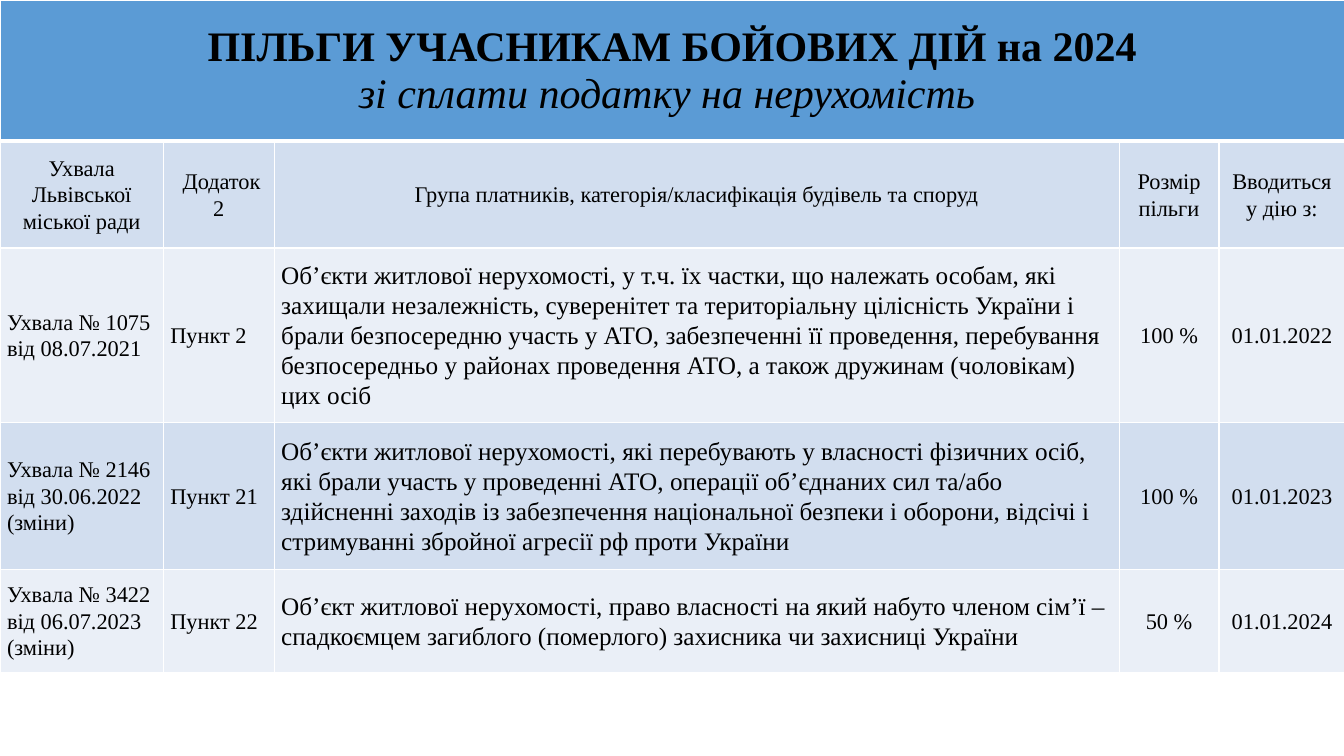
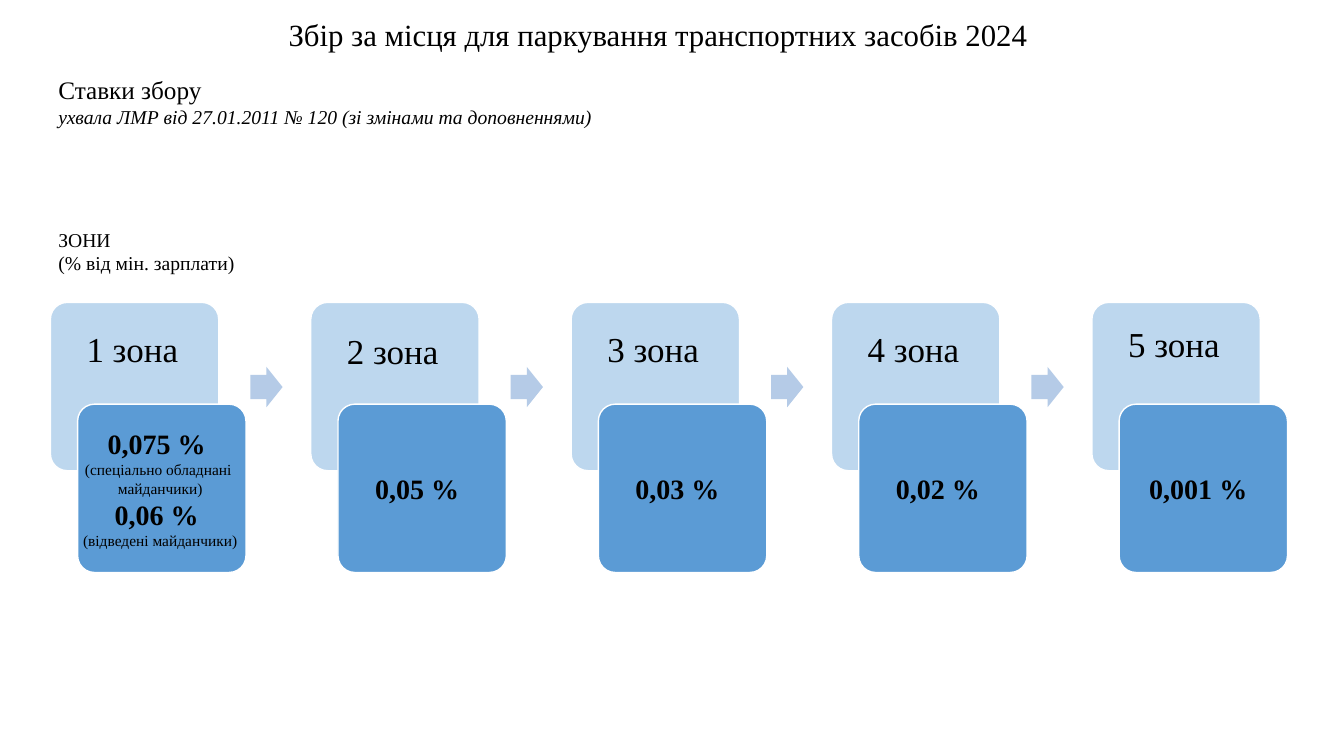
from dataclasses import dataclass

from lxml.etree import SubElement
from pptx import Presentation
from pptx.dml.color import RGBColor
from pptx.enum.shapes import MSO_SHAPE
from pptx.enum.text import MSO_ANCHOR, PP_ALIGN
from pptx.oxml.ns import qn
from pptx.util import Inches, Pt


@dataclass(frozen=True)
class Theme:
    """Colours, font and type sizes shared by the slides."""
    font: str = "Times New Roman"
    ink: str = "000000"
    white: str = "FFFFFF"
    blue: str = "5B9BD5"
    light_blue: str = "BDD7EE"
    arrow: str = "B5CBE7"
    band_dark: str = "D2DEEF"
    band_light: str = "EAEFF7"
    banner: int = 30
    zone: int = 25
    title: int = 22
    rate: int = 20
    body: int = 18
    cell: int = 16
    note: int = 14
    small: int = 11


THEME = Theme()

COLUMN_WIDTHS = [1.62, 1.1, 8.38, 0.99, 1.25]
ROW_HEIGHTS = [1.4, 1.06, 1.73, 1.46, 1.02]
GROUP_COLUMN = 2
CENTRED_COLUMNS = (3, 4)

BENEFIT_TITLE = [
    ("ПІЛЬГИ УЧАСНИКАМ БОЙОВИХ ДІЙ на 2024", THEME.banner, True, False),
    ("зі сплати податку на нерухомість ", THEME.banner, False, True),
]
BENEFIT_ROWS = [
    ["Ухвала Львівської міської ради", "\u00a0Додаток 2".replace("\u00a0", chr(160)),
     "Група платників, категорія/класифікація будівель та споруд",
     "Розмір пільги", "Вводиться у дію з:"],
    ["Ухвала № 1075 від 08.07.2021", "Пункт 2",
     "Об’єкти житлової нерухомості, у т.ч. їх частки, що належать особам, які "
     "захищали незалежність, суверенітет та територіальну цілісність України і "
     "брали безпосередню участь у АТО, забезпеченні її проведення, перебування "
     "безпосередньо у районах проведення АТО, а також дружинам (чоловікам) цих осіб",
     "100 %", "01.01.2022"],
    ["Ухвала № 2146 від 30.06.2022 (зміни)", "Пункт 21",
     "Об’єкти житлової нерухомості, які перебувають у власності фізичних осіб, "
     "які брали участь у проведенні АТО, операції об’єднаних сил та/або "
     "здійсненні заходів із забезпечення національної безпеки і оборони, відсічі і "
     "стримуванні збройної агресії рф проти України",
     "100 %", "01.01.2023"],
    ["Ухвала № 3422 від 06.07.2023 (зміни)", "Пункт 22",
     "Об’єкт житлової нерухомості, право власності на який набуто членом сім’ї – "
     "спадкоємцем загиблого (померлого) захисника чи захисниці України",
     "50 %", "01.01.2024"],
]

CARD_SIZE = 1.67
FIRST_CARD_LEFT, LAST_CARD_LEFT = 0.5, 10.83
CARDS_TOP = 3
ZONES = [
    ("1 зона", 0.2, [
        ("0,075 % ", THEME.rate, True, False),
        ("(спеціально обладнані ", THEME.small, False, False),
        ("майданчики)", THEME.small, False, False),
        ("0,06 % ", THEME.rate, True, False),
        ("(відведені майданчики)", THEME.small, False, False),
    ]),
    ("2 зона", 0.22, [("0,05 % ", THEME.rate, True, False)]),
    ("3 зона", 0.2, [("0,03 % ", THEME.rate, True, False)]),
    ("4 зона", 0.2, [("0,02 % ", THEME.rate, True, False)]),
    ("5 зона", 0.15, [("0,001 % ", THEME.rate, True, False)]),
]


def write(frame, lines, align=PP_ALIGN.LEFT, spacing=1.0):
    """Fill a text frame with (text, size, bold, italic) lines."""
    frame.word_wrap = True
    frame.text = "\n".join(line[0] for line in lines)
    for para, (_, size, bold, italic) in zip(frame.paragraphs, lines):
        para.alignment = align
        para.line_spacing = spacing
        for span in para.runs:
            span.font.name = THEME.font
            span.font.size = Pt(size)
            span.font.bold = bold
            span.font.italic = italic
            span.font.color.rgb = RGBColor.from_string(THEME.ink)


def add_text(page, left, top, width, height, lines, align=PP_ALIGN.LEFT,
             anchor=MSO_ANCHOR.TOP, spacing=1.0):
    """Add a wrapped text box."""
    box = page.shapes.add_textbox(Inches(left), Inches(top), Inches(width), Inches(height))
    write(box.text_frame, lines, align, spacing)
    box.text_frame.vertical_anchor = anchor


def add_block(page, kind, left, top, width, height, fill, adjustments, outlined=False):
    """Add a flat filled shape, optionally with a white outline."""
    block = page.shapes.add_shape(kind, Inches(left), Inches(top), Inches(width), Inches(height))
    block.shadow.inherit = False
    block.fill.solid()
    block.fill.fore_color.rgb = RGBColor.from_string(fill)
    for index, value in enumerate(adjustments):
        block.adjustments[index] = value
    if outlined:
        block.line.color.rgb = RGBColor.from_string(THEME.white)
        block.line.width = Pt(1)
    else:
        block.line.fill.background()
    return block


def style_cell(cell, fill, bottom_width=1):
    """Give a table cell white borders, a fill and middle anchoring."""
    properties = cell._tc.get_or_add_tcPr()
    for side, width in (("L", 1), ("R", 1), ("T", 1), ("B", bottom_width)):
        line = SubElement(properties, qn(f"a:ln{side}"), w=str(Pt(width)))
        solid = SubElement(line, qn("a:solidFill"))
        SubElement(solid, qn("a:srgbClr"), val=THEME.white)
    cell.fill.solid()
    cell.fill.fore_color.rgb = RGBColor.from_string(fill)
    cell.vertical_anchor = MSO_ANCHOR.MIDDLE


def fill_benefit_cell(cell, text, row, column):
    """Write one cell below the banner, by its row and column."""
    is_header = row == 1
    style_cell(cell, THEME.band_dark if row % 2 else THEME.band_light)
    cell.margin_left = cell.margin_right = Inches(0.07)
    cell.margin_top = cell.margin_bottom = 0
    centred = is_header or column in CENTRED_COLUMNS
    size = THEME.body if column == GROUP_COLUMN and not is_header else THEME.cell
    write(cell.text_frame, [(text, size, False, False)],
          PP_ALIGN.CENTER if centred else PP_ALIGN.LEFT, 1.07)


def add_benefit_table(page, left, top):
    """Add the table of benefits under a merged banner row."""
    box = page.shapes.add_table(len(ROW_HEIGHTS), len(COLUMN_WIDTHS), Inches(left), Inches(top),
                                Inches(sum(COLUMN_WIDTHS)), Inches(sum(ROW_HEIGHTS)))
    table = box.table
    for column, width in zip(table.columns, COLUMN_WIDTHS):
        column.width = Inches(width)
    for row, height in zip(table.rows, ROW_HEIGHTS):
        row.height = Inches(height)
    for cell in table.rows[0].cells:
        style_cell(cell, THEME.blue, 3)
    banner = table.cell(0, 0)
    banner.merge(table.cell(0, len(COLUMN_WIDTHS) - 1))
    write(banner.text_frame, BENEFIT_TITLE, PP_ALIGN.CENTER)
    for row, texts in enumerate(BENEFIT_ROWS, 1):
        for column, text in enumerate(texts):
            fill_benefit_cell(table.cell(row, column), text, row, column)


def add_zone_card(page, left, top, name, name_drop, rates):
    """Add a zone card with its rate card overlapping it."""
    add_block(page, MSO_SHAPE.ROUNDED_RECTANGLE, left, top, CARD_SIZE, CARD_SIZE,
              THEME.light_blue, [0.1], True)
    rate_card = add_block(page, MSO_SHAPE.ROUNDED_RECTANGLE, left + 0.27, top + 1.01,
                          CARD_SIZE, CARD_SIZE, THEME.blue, [0.1], True)
    frame = rate_card.text_frame
    frame.margin_left = frame.margin_top = frame.margin_bottom = 0
    frame.margin_right = Inches(0.03)
    frame.vertical_anchor = MSO_ANCHOR.MIDDLE
    write(frame, rates, PP_ALIGN.CENTER)
    add_text(page, left + 0.26, top + name_drop, 1.41, 0.52,
             [(name, THEME.zone, False, False)])


def add_zone_row(page, left, top, last_left):
    """Spread the zone cards evenly and put an arrow in each gap."""
    pitch = (last_left - left) / (len(ZONES) - 1)
    for index, (name, name_drop, rates) in enumerate(ZONES):
        card_left = left + index * pitch
        if index:
            add_block(page, MSO_SHAPE.RIGHT_ARROW, card_left - 0.6, top + 0.64, 0.32, 0.4,
                      THEME.arrow, [0.6, 0.5])
        add_zone_card(page, card_left, top, name, name_drop, rates)


def build_benefit_page(page):
    """Build the slide of property tax benefits."""
    add_benefit_table(page, 0, 0)


def build_parking_page(page):
    """Build the slide of parking fee rates by zone."""
    add_text(page, 1.54, 0.09, 9.97, 0.49,
             [("Збір за місця для паркування транспортних засобів 2024", THEME.title, False, False)],
             PP_ALIGN.CENTER, MSO_ANCHOR.BOTTOM, 0.9)
    add_text(page, 0.48, 0.69, 5.92, 0.64, [
        ("Ставки збору", THEME.body, False, False),
        ("ухвала ЛМР від 27.01.2011 № 120 (зі змінами та доповненнями)", THEME.note, False, True),
    ])
    add_text(page, 0.48, 2.21, 2.79, 0.57, [
        ("ЗОНИ", THEME.note, False, False),
        ("(% від мін. зарплати)", THEME.note, False, False),
    ])
    add_zone_row(page, FIRST_CARD_LEFT, CARDS_TOP, LAST_CARD_LEFT)


def main():
    """Build and save the deck."""
    deck = Presentation()
    deck.slide_width, deck.slide_height = Inches(13.33), Inches(7.5)
    blank = deck.slide_layouts[6]
    for build_page in (build_benefit_page, build_parking_page):
        build_page(deck.slides.add_slide(blank))
    deck.save("out.pptx")


if __name__ == "__main__":
    main()
